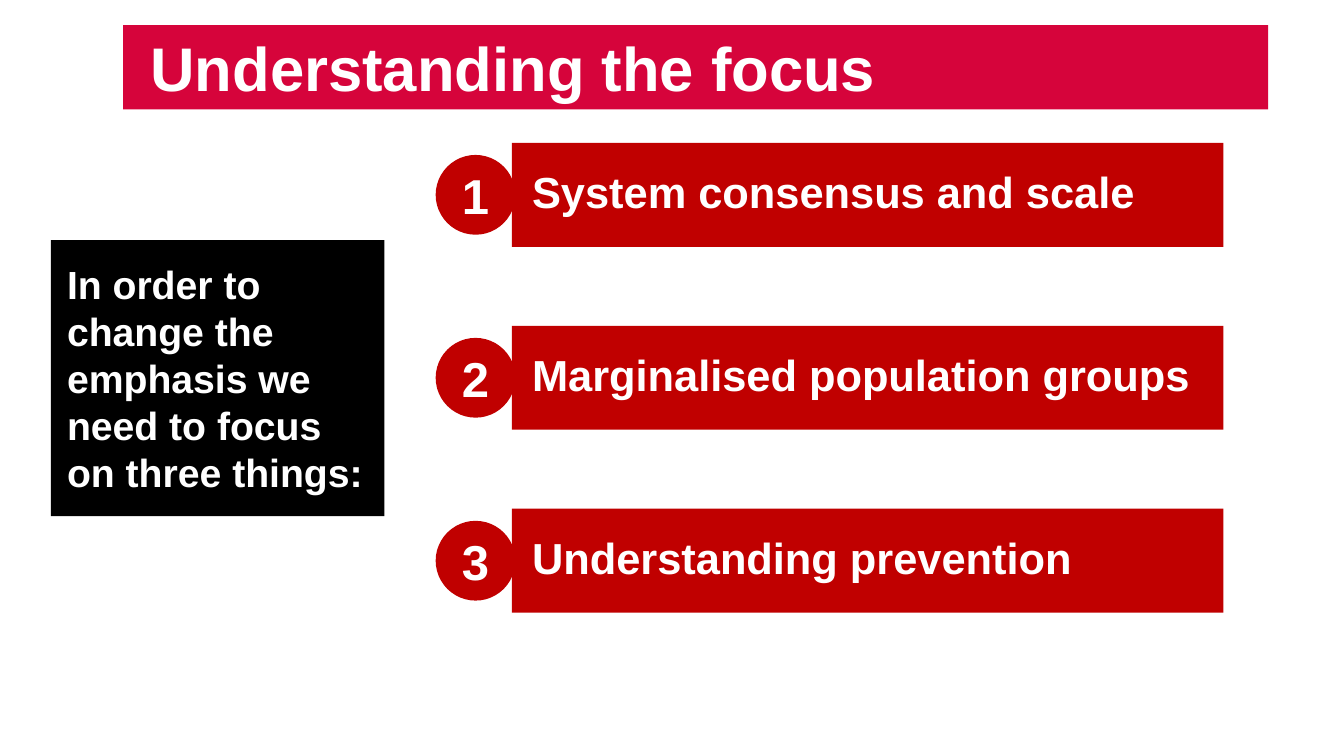
from pptx import Presentation
from pptx import util as u
from pptx.dml.color import RGBColor
from pptx.enum import shapes, text

WHITE = RGBColor(0xFF, 0xFF, 0xFF)
BLACK = RGBColor(0x00, 0x00, 0x00)
RED = RGBColor(0xC0, 0x00, 0x00)
CRIMSON = RGBColor(0xD6, 0x04, 0x3B)

FOCUS_POINTS = [
    "System consensus and scale",
    "Marginalised population groups",
    "Understanding prevention",
]
BAR_TOP, BAR_HEIGHT, BAR_PITCH = 3.6, 2.62, 4.61
CIRCLE_SIZE = 2.01


class FocusSlide:
    font_name = "Arial"

    def __init__(self, presentation):
        self.slide = presentation.slides.add_slide(presentation.slide_layouts[5])

    def style_label(self, shape, wording, size, color, left_inset, right_inset,
                    alignment=text.PP_ALIGN.LEFT):
        """Fill the shape and set its bold white text; insets are in cm."""
        shape.fill.solid()
        shape.fill.fore_color.rgb = color
        frame = shape.text_frame
        frame.text = wording
        frame.word_wrap = True
        frame.auto_size = text.MSO_AUTO_SIZE.NONE
        frame.vertical_anchor = text.MSO_ANCHOR.MIDDLE
        frame.margin_left, frame.margin_right = u.Cm(left_inset), u.Cm(right_inset)
        paragraph = frame.paragraphs[0]
        paragraph.alignment = alignment
        font = paragraph.runs[0].font
        font.name, font.size, font.bold = self.font_name, u.Pt(size), True
        font.color.rgb = WHITE
        return paragraph

    def title(self, wording, left, top, width, height):
        shape = self.slide.shapes.title
        shape.left, shape.top = u.Cm(left), u.Cm(top)
        shape.width, shape.height = u.Cm(width), u.Cm(height)
        self.style_label(shape, wording, 44, CRIMSON, 0.69, 0.25)

    def add_shape(self, kind, left, top, width, height):
        shape = self.slide.shapes.add_shape(
            kind, u.Cm(left), u.Cm(top), u.Cm(width), u.Cm(height))
        shape.shadow.inherit = False
        shape.line.fill.background()
        return shape

    def intro(self, wording, left, top, width, height):
        shape = self.add_shape(shapes.MSO_SHAPE.RECTANGLE, left, top, width, height)
        self.style_label(shape, wording, 28, BLACK, 0.41, 0.3)

    def bar(self, wording, top):
        shape = self.add_shape(shapes.MSO_SHAPE.RECTANGLE, 12.9, top, 17.93, BAR_HEIGHT)
        paragraph = self.style_label(shape, wording, 31, RED, 0.51, 0.51)
        paragraph.line_spacing = 0.9
        paragraph.space_after = u.Pt(6)

    def number(self, number, top):
        shape = self.add_shape(shapes.MSO_SHAPE.OVAL, 10.98, top, CIRCLE_SIZE, CIRCLE_SIZE)
        self.style_label(shape, str(number), 35, RED, 0.25, 0.25, text.PP_ALIGN.CENTER)


def main():
    presentation = Presentation()
    presentation.slide_width, presentation.slide_height = u.Cm(33.87), u.Cm(19.05)

    focus = FocusSlide(presentation)
    focus.title("Understanding the focus", 3.1, 0.63, 28.86, 2.13)
    focus.intro("In order to change the emphasis we need to focus on three things:",
                1.28, 6.05, 8.41, 6.96)
    for index, point in enumerate(FOCUS_POINTS):
        top = BAR_TOP + index * BAR_PITCH
        focus.bar(point, top)
        focus.number(index + 1, top + (BAR_HEIGHT - CIRCLE_SIZE) / 2)

    presentation.save("out.pptx")


if __name__ == "__main__":
    main()
